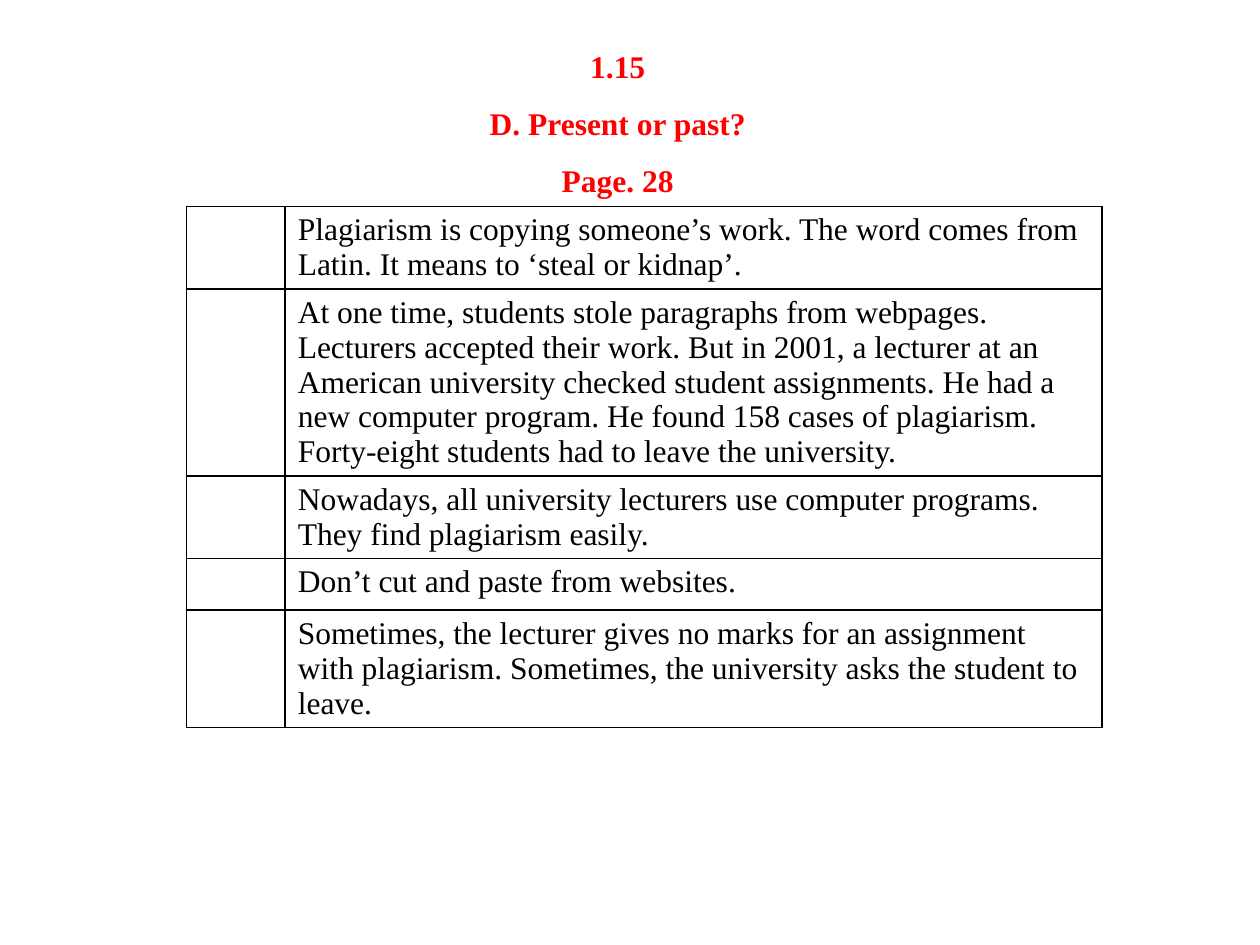
from pptx import Presentation
from pptx.dml.color import RGBColor
from pptx.enum.text import MSO_ANCHOR, MSO_AUTO_SIZE, PP_ALIGN
from pptx.oxml.ns import qn
from pptx.util import Pt
from lxml import etree

TOP = MSO_ANCHOR.TOP
NO_FIT = MSO_AUTO_SIZE.NONE
CENTER = PP_ALIGN.CENTER
RED = RGBColor(255, 0, 0)
BLACK = RGBColor(0, 0, 0)
WHITE = RGBColor(255, 255, 255)
FACE = "Times New Roman"
HEADS = ["1.15", "D. Present or past?", "Page. 28"]
ROWS = [
    ("Plagiarism is copying someone’s work. The word comes from Latin. "
     "It means to ‘steal or kidnap’.", 47),
    ("At one time, students stole paragraphs from webpages. Lecturers "
     "accepted their work. But in 2001, a lecturer at an American university "
     "checked student assignments. He had a new computer program. He found "
     "158 cases of plagiarism. Forty-eight students had to leave the "
     "university.", 107),
    ("Nowadays, all university lecturers use computer programs. They find "
     "plagiarism easily.", 47),
    ("Don’t cut and paste from websites.", 29.5),
    ("Sometimes, the lecturer gives no marks for an assignment with "
     "plagiarism. Sometimes, the university asks the student to leave.", 67),
]
WIDTHS = [56.4, 466.8]


def style(font, color, bold=False):
    """Set the shared face and size with a colour and weight."""
    font.name, font.size, font.bold = FACE, Pt(18), bold
    font.color.rgb = color


def add_title(slide):
    """Fill the title with the centred heading lines."""
    title = slide.shapes.title
    title.left, title.top = Pt(0), Pt(16)
    title.width, title.height = Pt(706), Pt(98)
    frame = title.text_frame
    frame.auto_size = NO_FIT
    frame.vertical_anchor = TOP
    frame.margin_left = frame.margin_right = Pt(0)
    frame.margin_top = frame.margin_bottom = Pt(0)
    frame.text = "\n".join(HEADS)
    for para in frame.paragraphs:
        para.alignment = CENTER
        para.line_spacing = Pt(32.5)
        para.space_before = para.space_after = Pt(0)
        for run in para.runs:
            style(run.font, RED, True)


def add_edges(cell):
    """Draw a thin black line on each side of a cell."""
    props = cell._tc.get_or_add_tcPr()
    for spot, side in enumerate(("a:lnL", "a:lnR", "a:lnT", "a:lnB")):
        line = etree.Element(qn(side), w=str(Pt(1)))
        fill = etree.SubElement(line, qn("a:solidFill"))
        etree.SubElement(fill, qn("a:srgbClr"), val=str(BLACK))
        props.insert(spot, line)


def add_grid(slide):
    """Add the table of passages with an empty answer column."""
    high = sum(size for _, size in ROWS)
    grid = slide.shapes.add_table(
        len(ROWS), len(WIDTHS), Pt(106.6), Pt(118), Pt(sum(WIDTHS)), Pt(high)
    ).table
    grid.first_row = grid.horz_banding = False
    for col, width in zip(grid.columns, WIDTHS):
        col.width = Pt(width)
    for row, (text, size) in zip(grid.rows, ROWS):
        row.height = Pt(size)
        row.cells[1].text = text
        style(row.cells[1].text_frame.paragraphs[0].runs[0].font, BLACK)
        for cell in row.cells:
            cell.fill.solid()
            cell.fill.fore_color.rgb = WHITE
            add_edges(cell)


def main():
    """Build and save the slide."""
    deck = Presentation()
    deck.slide_width, deck.slide_height = Pt(720), Pt(540)
    slide = deck.slides.add_slide(deck.slide_layouts[5])
    add_title(slide)
    add_grid(slide)
    deck.save("out.pptx")


if __name__ == "__main__":
    main()
